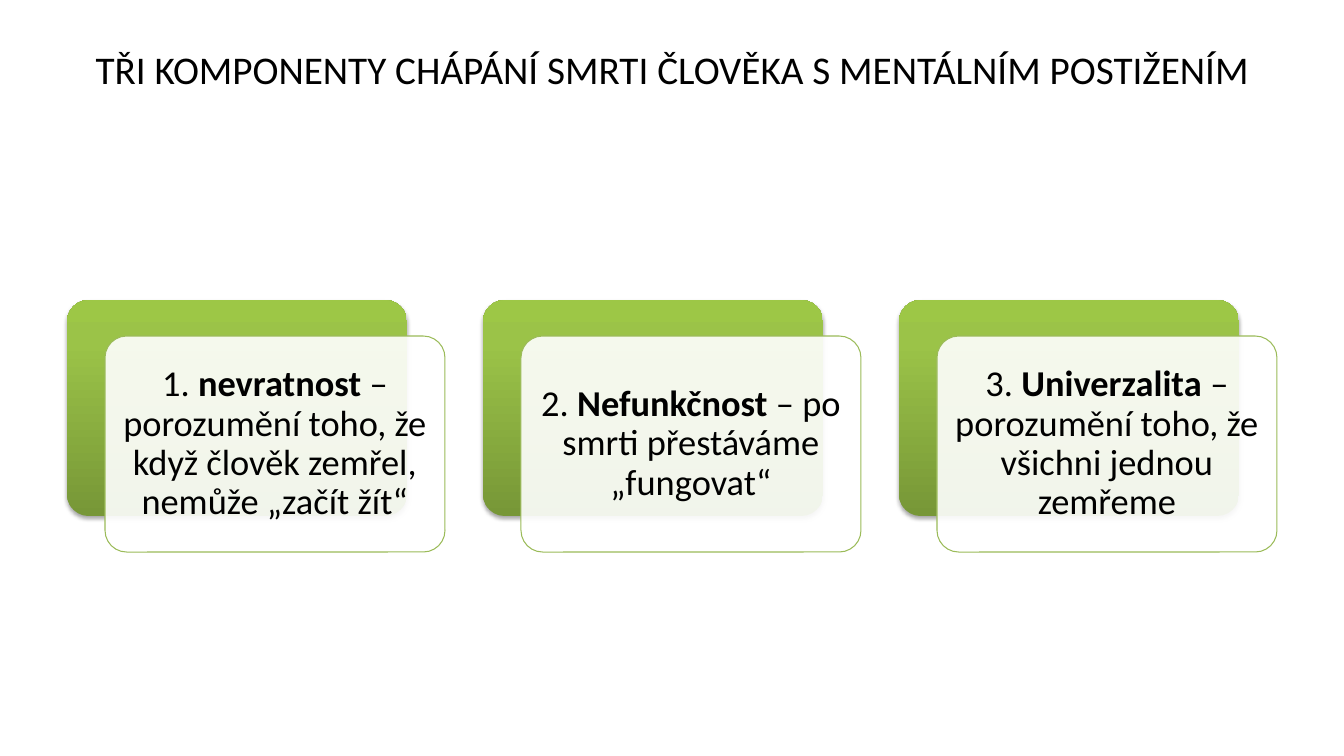
"""Build the slide on the three components of understanding death."""
from lxml.etree import SubElement
from pptx import Presentation
from pptx.dml.color import RGBColor as Color
from pptx.enum.shapes import MSO_SHAPE as Shape
from pptx.enum.text import MSO_ANCHOR as Anchor, PP_ALIGN as Align
from pptx.oxml.ns import qn
from pptx.util import Emu, Pt

PX = 914400 / 100.8
THEME = {
    "font": "Calibri",
    "text": "000000",
    "panel": "FFFFFF",
    "outline": "9BBB59",
    "shadow": "000000",
    "gradient": [(0, "779737"), (80, "9BC348"), (100, "9DC746")],
    "title_size": 28,
    "body_size": 26,
}
TITLE = "TŘI KOMPONENTY CHÁPÁNÍ SMRTI ČLOVĚKA S MENTÁLNÍM POSTIŽENÍM"
COMPONENTS = [
    ("1. ", "nevratnost", " – porozumění toho, že když člověk zemřel, nemůže „začít žít“"),
    ("2. ", "Nefunkčnost ", "– po smrti přestáváme „fungovat“"),
    ("3. ", "Univerzalita", " – porozumění toho, že všichni jednou zemřeme"),
]
LEFT, TOP, WIDTH, HEIGHT, PITCH = 67, 300, 340, 216, 416
SHIFT_X, SHIFT_Y = 38, 36


def px(*lengths):
    return [Emu(round(length * PX)) for length in lengths]


def write(box, spans, size, margins):
    frame = box.text_frame
    left, top, right, bottom = px(*margins)
    frame_format = {
        "word_wrap": True, "vertical_anchor": Anchor.MIDDLE,
        "margin_left": left, "margin_top": top,
        "margin_right": right, "margin_bottom": bottom,
    }
    for name, value in frame_format.items():
        setattr(frame, name, value)
    para = frame.paragraphs[0]
    para.alignment, para.line_spacing = Align.CENTER, 0.9
    for text, bold in spans:
        span = para.add_run()
        span.text = text
        for name, value in {"name": THEME["font"], "size": Pt(size), "bold": bold}.items():
            setattr(span.font, name, value)
        span.font.color.rgb = Color.from_string(THEME["text"])


deck = Presentation()
deck.slide_width, deck.slide_height = px(1344, 756)
page = deck.slides.add_slide(deck.slide_layouts[6])

title = page.shapes.add_textbox(*px(67, 30, 1210, 126))
write(title, [(TITLE, False)], THEME["title_size"], (10, 5, 10, 48))

for index, (number, term, meaning) in enumerate(COMPONENTS):
    left = LEFT + index * PITCH
    card = page.shapes.add_shape(Shape.ROUNDED_RECTANGLE, *px(left, TOP, WIDTH, HEIGHT))
    panel = page.shapes.add_shape(
        Shape.ROUNDED_RECTANGLE, *px(left + SHIFT_X, TOP + SHIFT_Y, WIDTH, HEIGHT))
    for box in (card, panel):
        box.adjustments[0] = 0.1
        box.shadow.inherit = False

    card.line.fill.background()
    card.fill.gradient()
    card.fill.gradient_angle = 90
    properties = card._element.spPr
    stops = properties.find(".//" + qn("a:gsLst"))
    stops.clear()
    for position, colour in THEME["gradient"]:
        stop = SubElement(stops, qn("a:gs"), pos=str(position * 1000))
        SubElement(stop, qn("a:srgbClr"), val=colour)
    shadow = SubElement(
        properties.find(qn("a:effectLst")), qn("a:outerShdw"),
        blurRad=str(Pt(3.1)), dist=str(Pt(1.8)), dir="5400000", rotWithShape="0")
    tint = SubElement(shadow, qn("a:srgbClr"), val=THEME["shadow"])
    SubElement(tint, qn("a:alpha"), val="35000")

    panel.fill.solid()
    panel.fill.fore_color.rgb = Color.from_string(THEME["panel"])
    tint = panel._element.spPr.find(qn("a:solidFill")).find(qn("a:srgbClr"))
    SubElement(tint, qn("a:alpha"), val="90000")
    panel.line.color.rgb = Color.from_string(THEME["outline"])
    panel.line.width = Pt(0.75)
    spans = [(number, False), (term, True), (meaning, False)]
    write(panel, spans, THEME["body_size"], (11, 11, 11, 11))

deck.save("out.pptx")
